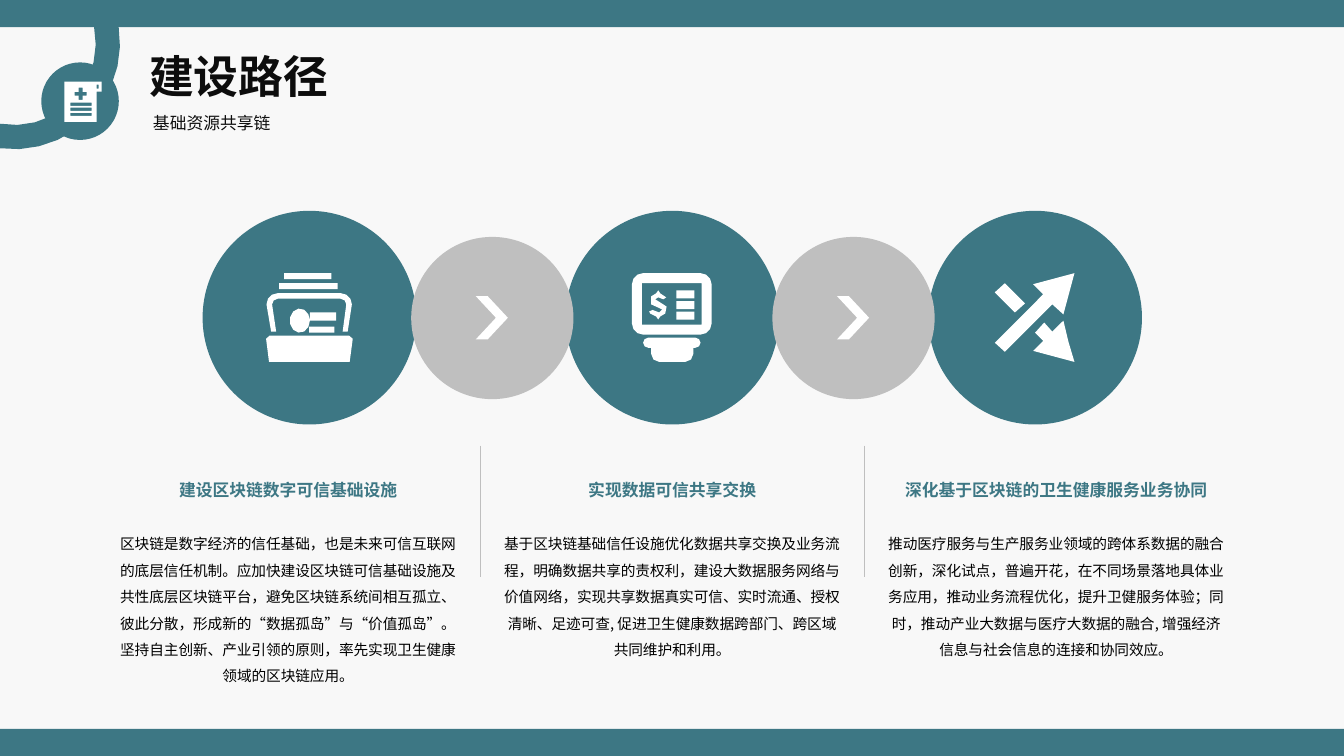
from math import cos, radians, sin, sqrt

from lxml.etree import SubElement
from pptx import Presentation
from pptx.dml.color import RGBColor
from pptx.enum.shapes import MSO_CONNECTOR, MSO_SHAPE
from pptx.enum.text import MSO_AUTO_SIZE, PP_ALIGN
from pptx.oxml.ns import qn
from pptx.util import Pt

TEAL = RGBColor(0x3D, 0x77, 0x84)
GREY = RGBColor(0xBF, 0xBF, 0xBF)
PALE = RGBColor(0xF8, 0xF8, 0xF8)
WHITE = RGBColor(0xFF, 0xFF, 0xFF)
INK = RGBColor(0x0D, 0x0D, 0x0D)
BLACK = RGBColor(0, 0, 0)
FONT = "Noto Sans CJK SC"
WIDTH, HEIGHT = 960, 540
BAND = 19.4

TOPICS = [
    ("建设区块链数字可信基础设施",
     "区块链是数字经济的信任基础，也是未来可信互联网的底层信任机制。"
     "应加快建设区块链可信基础设施及共性底层区块链平台，避免区块链系统间相互孤立、"
     "彼此分散，形成新的“数据孤岛”与“价值孤岛”。"
     "坚持自主创新、产业引领的原则，率先实现卫生健康领域的区块链应用。"),
    ("实现数据可信共享交换",
     "基于区块链基础信任设施优化数据共享交换及业务流程，明确数据共享的责权利，"
     "建设大数据服务网络与价值网络，实现共享数据真实可信、实时流通、授权清晰、"
     "足迹可查, 促进卫生健康数据跨部门、跨区域共同维护和利用。"),
    ("深化基于区块链的卫生健康服务业务协同",
     "推动医疗服务与生产服务业领域的跨体系数据的融合创新，深化试点，普遍开花，"
     "在不同场景落地具体业务应用，推动业务流程优化，提升卫健服务体验；同时，"
     "推动产业大数据与医疗大数据的融合, 增强经济信息与社会信息的连接和协同效应。"),
]

HEAD = {"size": Pt(12), "bold": True, "color": TEAL}
BODY = {"size": Pt(10.5), "bold": False, "color": BLACK}
TITLE = {"size": Pt(32), "bold": True, "color": INK}
NOTE = {"size": Pt(12), "bold": False, "color": INK}
MID = {"alignment": PP_ALIGN.CENTER, "line_spacing": 1.5}
GROW = {"auto_size": MSO_AUTO_SIZE.SHAPE_TO_FIT_TEXT}


def apply(item, form):
    for key, value in form.items():
        if key == "color":
            item.color.rgb = value
        else:
            setattr(item, key, value)


def paint(shape, color):
    shape.shadow.inherit = False
    shape.fill.solid()
    shape.fill.fore_color.rgb = color
    shape.line.fill.background()
    return shape


def add_shape(slide, kind, box, color):
    return paint(slide.shapes.add_shape(kind, *map(Pt, box)), color)


def add_text(slide, box, parts, frame_form):
    frame = slide.shapes.add_textbox(*map(Pt, box)).text_frame
    apply(frame, {"word_wrap": True, **frame_form})
    for order, (text, font, layout) in enumerate(parts):
        para = frame.add_paragraph() if order else frame.paragraphs[0]
        apply(para, layout)
        run = para.add_run()
        run.text = text
        apply(run.font, {"name": FONT, **font})
        SubElement(run.font._element, qn("a:ea")).set("typeface", FONT)


def add_rule(slide, left, top, base):
    rule = slide.shapes.add_connector(
        MSO_CONNECTOR.STRAIGHT, Pt(left), Pt(top), Pt(left), Pt(base))
    SubElement(rule._element.spPr, qn("a:effectLst"))
    rule.line.color.rgb = GREY
    rule.line.width = Pt(0.25)


def add_icon(slide, paths, color):
    first, *rest = [[(Pt(x), Pt(y)) for x, y in path] for path in paths]
    pen = slide.shapes.build_freeform(*first[0])
    pen.add_line_segments(first[1:])
    for path in rest:
        pen.move_to(*path[0])
        pen.add_line_segments(path[1:])
    paint(pen.convert_to_shape(), color)


def arc(x, y, wide, high, start, stop):
    count = max(1, round(abs(stop - start) / 90 * sqrt(wide)))
    turns = [radians(start + (stop - start) * n / count) for n in range(count + 1)]
    return [(x + wide * cos(t), y + high * sin(t)) for t in turns]


def bar(x, y, wide, high):
    return [(x, y), (x + wide, y), (x + wide, y + high), (x, y + high)]


def pill(x, y, wide, high, curve):
    spots = bar(x + curve, y + curve, wide - 2 * curve, high - 2 * curve)
    return [dot for n, (cx, cy) in enumerate(spots)
            for dot in arc(cx, cy, curve, curve, 180 + 90 * n, 270 + 90 * n)]


def draw_badge(slide):
    ribbon = arc(10.1, 31, 75.6, 75.6, -8.8, 97.7) + arc(10.1, 31, 58.3, 58.3, 100, -11.5)
    add_icon(slide, [ribbon], TEAL)
    add_shape(slide, MSO_SHAPE.OVAL, (29.5, 44.6, 55.4, 55.4), TEAL)
    page = [(46.1, 58.3), (72.7, 58.3), (72.7, 65.5), (69.1, 65.5), (69.1, 87.1), (46.1, 87.1)]
    cross = [(57.6 + x, 67 + y) for x, y in [
        (-1.4, -4.3), (1.4, -4.3), (1.4, -1.4), (4.3, -1.4), (4.3, 1.4), (1.4, 1.4),
        (1.4, 4.3), (-1.4, 4.3), (-1.4, 1.4), (-4.3, 1.4), (-4.3, -1.4), (-1.4, -1.4)]]
    lines = [bar(50.4, 73.4 + 3.6 * n, 15.1, 2.2) for n in range(3)]
    add_icon(slide, [page, cross, *lines, bar(69.1, 60.5, 1.4, 2.9)], WHITE)


def draw_cards(slide):
    frame = (arc(198.4, 217.4, 8, 8, 180, 270) + arc(243.4, 217.4, 8, 8, 270, 360)
             + [(248.4, 236.9), (244.8, 236.9)]
             + arc(243.4, 217.4, 4, 4, 360, 270) + arc(198.4, 217.4, 4, 4, 270, 180)
             + [(197.3, 236.9), (193.7, 236.9)])
    tray = [(190.1, 242), (192.5, 239.8), (249.5, 239.8), (252, 242),
            (249.8, 258.5), (192.2, 258.5)]
    add_icon(slide, [
        tray, frame, arc(214.2, 229, 7.2, 8.6, 0, 360),
        bar(203, 195.1, 33.8, 4.3), bar(199.4, 202.3, 41.8, 4.3),
        bar(221.4, 223.2, 18.7, 5.8), bar(220.8, 233.3, 18, 4.3)], WHITE)


def draw_screen(slide):
    dollar = [
        (471.6, 216), (468, 213.8), (470.2, 212.4), (473.8, 213.8), (475.9, 212.4),
        (471.6, 209.5), (470.2, 207.4), (468.7, 209.5), (465.1, 211.7), (465.1, 217.4),
        (473, 221), (470.9, 223.2), (466.2, 221.4), (463.7, 222.5), (464.4, 223.9),
        (468.7, 226.1), (470.2, 228.2), (471.6, 226.1), (475.2, 223.9), (476.2, 219)]
    foot = (arc(489.5, 252.7, 5.8, 5.8, 0, 90) + arc(470.9, 252.7, 5.8, 5.8, 90, 180)
            + [(465.1, 248.4), (495.3, 248.4)])
    keys = [bar(483.1, 207.4 + 7.6 * n, 13, 5.8) for n in range(3)]
    add_icon(slide, [
        pill(451.4, 195.1, 56.9, 43.9, 7.9), bar(458.6, 202.3, 42.5, 29.5),
        *keys, dollar, pill(459.4, 241.2, 41, 7.2, 3.6), foot], WHITE)


def draw_arrows(slide):
    add_icon(slide, [
        [(763.2, 244.1), (767.5, 258.5), (738, 250.6), (745.2, 243.4), (739.4, 237.6),
         (745.9, 230.4), (751.7, 236.9), (759.6, 229)],
        [(751.7, 217.4), (759.6, 224.6), (767.5, 195.1), (738, 203), (745.2, 210.2),
         (710.6, 244.8), (717.8, 251.3)],
        [(732.2, 216.7), (717.8, 202.3), (710.6, 208.8), (725, 223.2)]], WHITE)


def main():
    deck = Presentation()
    deck.slide_width, deck.slide_height = Pt(WIDTH), Pt(HEIGHT)
    slide = deck.slides.add_slide(deck.slide_layouts[6])
    slide.background.fill.solid()
    slide.background.fill.fore_color.rgb = PALE

    add_text(slide, (102.2, 77, 183.6, 21.6),
             [("基础资源共享链", NOTE, {"alignment": PP_ALIGN.JUSTIFY})], GROW)
    draw_badge(slide)
    for top in (HEIGHT - BAND, 0):
        add_shape(slide, MSO_SHAPE.RECTANGLE, (0, top, WIDTH, BAND), TEAL)
    add_text(slide, (99.4, 31, 144, 46), [("建设路径", TITLE, {})],
             {**GROW, "word_wrap": False})

    for n in range(3):
        add_shape(slide, MSO_SHAPE.OVAL, (144.7 + 259.2 * n, 150.6, 152.6, 152.6), TEAL)
    for n in range(2):
        shift = 258 * n
        add_shape(slide, MSO_SHAPE.OVAL, (293.7 + shift, 169.2, 115.9, 115.9), GREY)
        mark = add_shape(slide, MSO_SHAPE.CHEVRON, (339.8 + shift, 211.5, 23, 31), WHITE)
        mark.adjustments[0] = 0.63
        add_rule(slide, 342.8 + 274.3 * n, 318.3, 411.9)
    for draw in (draw_cards, draw_screen, draw_arrows):
        draw(slide)

    for n, (head, body) in enumerate(TOPICS):
        add_text(slide, (76.3 + 274.3 * n, 331.9, 259.2, 67),
                 [(head, HEAD, MID), (body, BODY, {**MID, "space_before": Pt(18.9)})], {})
    deck.save("out.pptx")


if __name__ == "__main__":
    main()
